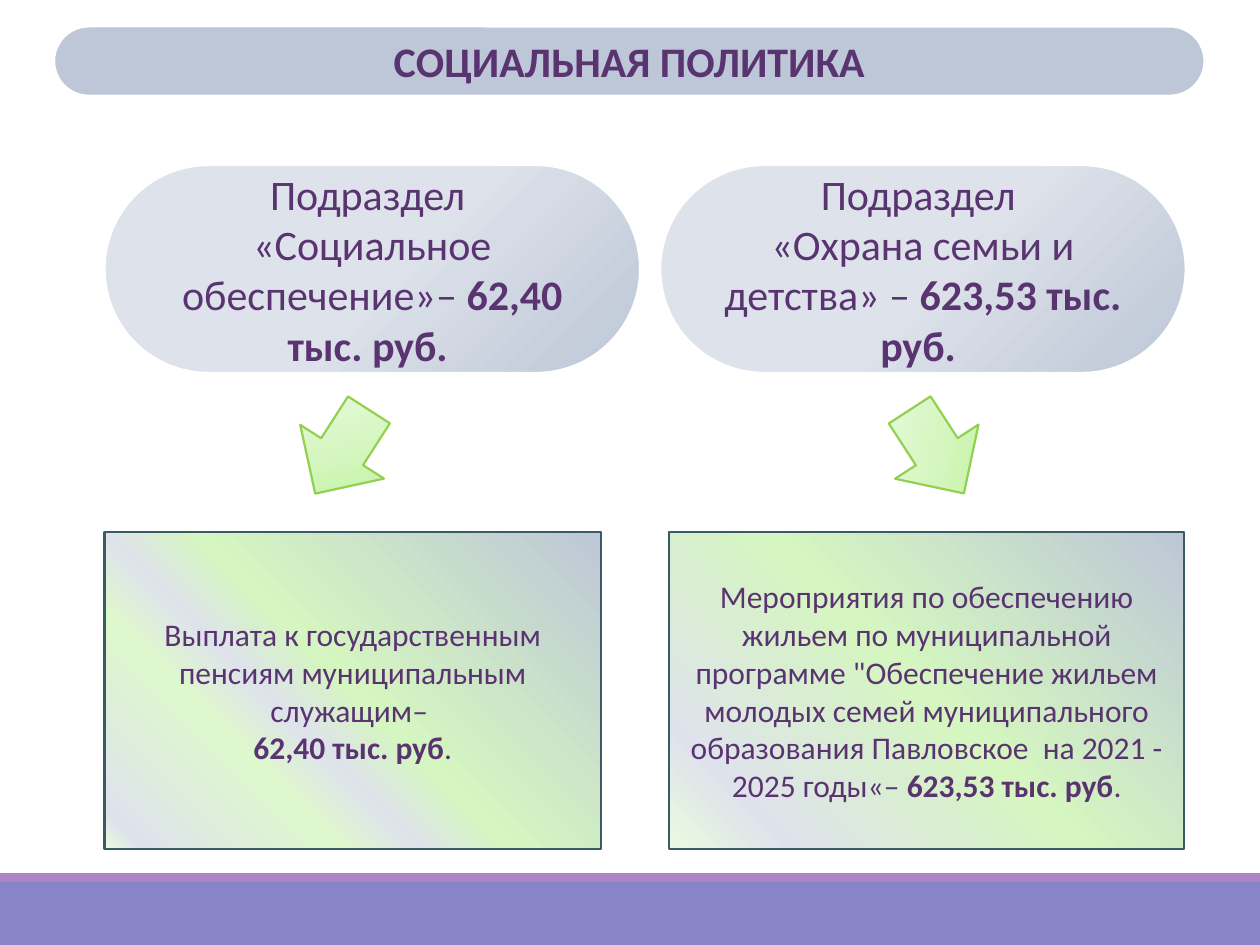
from lxml import etree
from pptx import Presentation
from pptx import util as u
from pptx.dml.color import RGBColor
from pptx.enum import shapes, text
from pptx.oxml.ns import qn

W, H = 10, 7.5
INK, BLUE, WHITE = "5A3471", "BDC7D7", "FFFFFF"
MIST = [(0, BLUE), (50, "DEE3EB"), (91, "DEE3EB"), (100, "DFF3E3")]
LEAF = [(0, "BEF297"), (50, "D5F6C0"), (100, "EAFAE0")]
TITLE = [[("СОЦИАЛЬНАЯ ПОЛИТИКА", True)]]
BANDS = [(7, 0.5, "8784C7"), (6.93, 0.07, "AD84C6")]
COLS = [
    {
        "pill": (0.83, 4.25), "box": (0.83, 3.94), "arrow": (2.32, 32.7),
        "head": [[("Подраздел ", False)],
                 [("«Социальное обеспечение»– ", False), ("62,40 тыс. руб. ", True)]],
        "body": [[("Выплата к государственным пенсиям муниципальным служащим– ", False)],
                 [("62,40 тыс. руб", True), (".", False)]],
        "fade": [(0, BLUE), (50, "D5F6C0"), (61, "DEE3EB"), (71, "DEF8CD"),
                 (95, "DEE3EB"), (100, "EAFAE0")],
    },
    {
        "pill": (5.24, 4.17), "box": (5.31, 4.09), "arrow": (7.04, 327),
        "head": [[("Подраздел ", False)],
                 [("«Охрана семьи и детства» – ", False), ("623,53 тыс. руб. ", True)]],
        "body": [[("Мероприятия по обеспечению жильем по муниципальной программе "
                   "\"Обеспечение жильем молодых семей муниципального образования "
                   "Павловское  на 2021 - 2025 годы«– ", False),
                  ("623,53 тыс. руб", True), (".", False)]],
        "fade": [(0, BLUE), (50, "D5F6C0"), (85, "DEE3EB"), (100, "EAFAE0")],
    },
]

prs = Presentation()
prs.slide_width, prs.slide_height = u.Inches(W), u.Inches(H)
slide = prs.slides.add_slide(prs.slide_layouts[6])
KIND = shapes.MSO_SHAPE


def tint(hue):
    return RGBColor.from_string(hue)


def blend(shape, stops, angle=None):
    old = shape._element.spPr.find(qn("a:solidFill"))
    grad = etree.Element(qn("a:gradFill"), rotWithShape="1")
    group = etree.SubElement(grad, qn("a:gsLst"))
    for pos, hue in stops:
        stop = etree.SubElement(group, qn("a:gs"), pos=str(pos * 1000))
        etree.SubElement(stop, qn("a:srgbClr"), val=hue)
    if angle is None:
        way = etree.SubElement(grad, qn("a:path"), path="circle")
        etree.SubElement(way, qn("a:fillToRect"), l="100000", t="100000")
    else:
        etree.SubElement(grad, qn("a:lin"), ang=str(angle * 60000), scaled="0")
    old.getparent().replace(old, grad)


def draw(kind, at, fill, line=None):
    shape = slide.shapes.add_shape(kind, *map(u.Inches, at))
    shape.shadow.inherit = False
    shape.fill.solid()
    shape.fill.fore_color.rgb = tint(fill)
    if line:
        shape.line.color.rgb = tint(line)
        shape.line.width = u.Pt(1.25)
    else:
        shape.line.fill.background()
    if kind == KIND.ROUNDED_RECTANGLE:
        shape.adjustments[0] = 0.5
    return shape


def write(shape, paras, size):
    frame = shape.text_frame
    frame.word_wrap = True
    frame.vertical_anchor = text.MSO_ANCHOR.MIDDLE
    for i, runs in enumerate(paras):
        para = frame.add_paragraph() if i else frame.paragraphs[0]
        para.alignment = text.PP_ALIGN.CENTER
        for words, bold in runs:
            run = para.add_run()
            run.text = words
            font = run.font
            font.name, font.size, font.bold = "Calibri", u.Pt(size), bold
            font.color.rgb = tint(INK)


for top, high, hue in BANDS:
    draw(KIND.RECTANGLE, (0, top, W, high), hue)

write(draw(KIND.ROUNDED_RECTANGLE, (0.43, 0.21, 9.13, 0.55), BLUE, WHITE), TITLE, 24)

for col in COLS:
    left, wide = col["pill"]
    pill = draw(KIND.ROUNDED_RECTANGLE, (left, 1.31, wide, 1.65), BLUE, WHITE)
    blend(pill, MIST)
    write(pill, col["head"], 24)

    left, turn = col["arrow"]
    arrow = draw(KIND.DOWN_ARROW, (left, 3.19, 0.79, 0.79), LEAF[0][1], "92D050")
    blend(arrow, LEAF, 225)
    arrow.rotation = turn

    left, wide = col["box"]
    box = draw(KIND.RECTANGLE, (left, 4.22, wide, 2.52), BLUE, "3A5B63")
    blend(box, col["fade"], 135)
    write(box, col["body"], 18)

prs.save("out.pptx")
